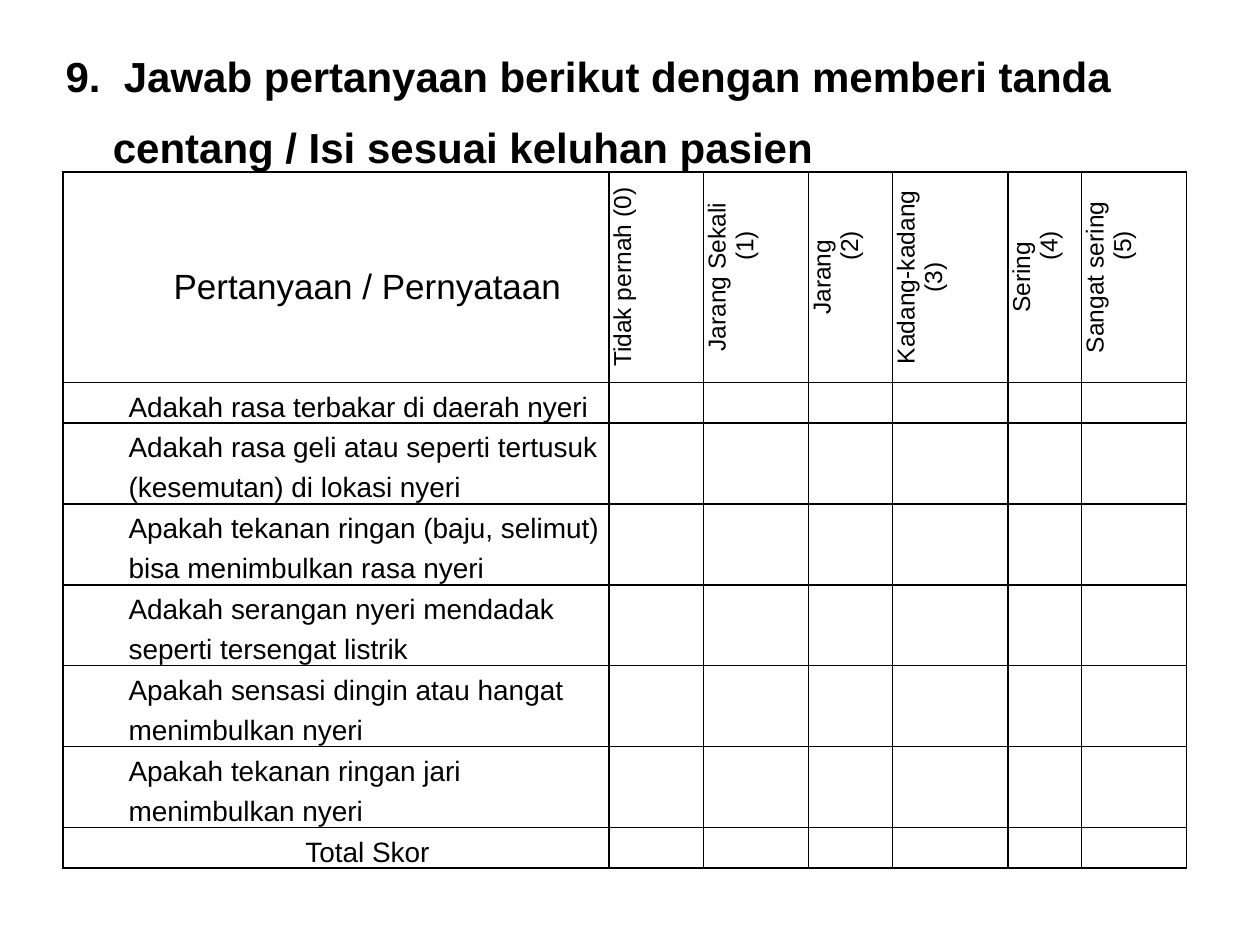
from dataclasses import dataclass

from lxml.etree import SubElement
from pptx import Presentation
from pptx.dml.color import RGBColor
from pptx.enum.text import MSO_ANCHOR, PP_ALIGN
from pptx.oxml.ns import qn
from pptx.util import Pt


@dataclass(frozen=True)
class Theme:
    font: str = "Arial"
    ink: str = "000000"
    title: int = 24
    heading: int = 20
    scale: int = 14
    body: int = 16
    border: int = 1


TITLE = "9.  Jawab pertanyaan berikut dengan memberi tanda centang / Isi sesuai keluhan pasien"
SCALE = [
    ["Tidak pernah (0)"],
    ["Jarang Sekali", "(1)"],
    ["Jarang", "(2)"],
    ["Kadang-kadang (3)"],
    ["Sering", "(4)"],
    ["Sangat sering", "(5)"],
]
QUESTIONS = [
    "Adakah rasa terbakar di daerah nyeri",
    "Adakah rasa geli atau seperti tertusuk (kesemutan) di lokasi nyeri",
    "Apakah tekanan ringan (baju, selimut) bisa menimbulkan rasa nyeri",
    "Adakah serangan nyeri mendadak seperti tersengat listrik",
    "Apakah sensasi dingin atau hangat menimbulkan nyeri",
    "Apakah tekanan ringan jari menimbulkan nyeri",
]
COLUMNS = [312, 54, 60, 48, 66, 42, 60]
LINE = 23.1
ROWS = [80, 120, LINE] + [2 * LINE] * 5 + [LINE]
INDENT = 36


class SlideBuilder:
    def __init__(self, slide, theme):
        self.slide = slide
        self.theme = theme

    def table(self, left, top, columns, rows):
        frame = self.slide.shapes.add_table(
            len(rows), len(columns), Pt(left), Pt(top), Pt(sum(columns)), Pt(sum(rows)))
        table = frame.table
        table.first_row = table.horz_banding = False
        for column, width in zip(table.columns, columns):
            column.width = Pt(width)
        for row, height in zip(table.rows, rows):
            row.height = Pt(height)
        return table

    def frame_cell(self, cell, sides="LRTB", margin=1.5):
        """Draw the borders on the named sides, and clear the fill and the other sides."""
        tc_pr = cell._tc.get_or_add_tcPr()
        for side in "LRTB":
            ln = SubElement(tc_pr, qn(f"a:ln{side}"), w=str(Pt(self.theme.border)))
            if side in sides:
                fill = SubElement(ln, qn("a:solidFill"))
                SubElement(fill, qn("a:srgbClr"), val=self.theme.ink)
            else:
                SubElement(ln, qn("a:noFill"))
        cell.fill.background()
        cell.margin_left = cell.margin_right = Pt(margin)
        cell.margin_top = cell.margin_bottom = 0

    def text(self, cell, lines, size, spacing=None, align=PP_ALIGN.LEFT,
             indents=(INDENT,), hanging=0, bold=False):
        """Write one paragraph per line, each with its own left indent."""
        tf = cell.text_frame
        for i, (line, indent) in enumerate(zip(lines, indents)):
            p = tf.add_paragraph() if i else tf.paragraphs[0]
            p.alignment = align
            p.line_spacing = spacing
            p_pr = p._p.get_or_add_pPr()
            p_pr.set("marL", str(Pt(indent)))
            p_pr.set("indent", str(Pt(-hanging)))
            r = p.add_run()
            r.text = line
            r.font.name = self.theme.font
            r.font.size = Pt(size)
            r.font.bold = bold
            r.font.color.rgb = RGBColor.from_string(self.theme.ink)

    def vertical_text(self, cell, lines):
        self.text(cell, lines, self.theme.scale, align=PP_ALIGN.CENTER, indents=(0, INDENT))
        cell.vertical_anchor = MSO_ANCHOR.MIDDLE
        cell._tc.get_or_add_tcPr().set("vert", "vert270")


def main():
    prs = Presentation()
    prs.slide_width, prs.slide_height = Pt(720), Pt(540)
    theme = Theme()
    builder = SlideBuilder(prs.slides.add_slide(prs.slide_layouts[6]), theme)

    table = builder.table(36, 18, COLUMNS, ROWS)
    for row in range(len(ROWS)):
        for column in range(len(COLUMNS)):
            builder.frame_cell(table.cell(row, column),
                               sides="LRTB" if row else "B",
                               margin=5 if row == 1 else 1.5)

    title = table.cell(0, 0)
    title.merge(table.cell(0, len(COLUMNS) - 1))
    builder.text(title, [TITLE], theme.title, 1.5, indents=(27,), hanging=27, bold=True)

    heading = table.cell(1, 0)
    heading.vertical_anchor = MSO_ANCHOR.MIDDLE
    builder.text(heading, ["Pertanyaan / Pernyataan"], theme.heading, 1.5, PP_ALIGN.CENTER)
    for column, lines in enumerate(SCALE, start=1):
        builder.vertical_text(table.cell(1, column), lines)

    for row, question in enumerate(QUESTIONS, start=2):
        builder.text(table.cell(row, 0), [question], theme.body, 1.3)
    builder.text(table.cell(len(ROWS) - 1, 0), ["Total Skor"], theme.body, 1.3, PP_ALIGN.CENTER)

    prs.save("out.pptx")


if __name__ == "__main__":
    main()
